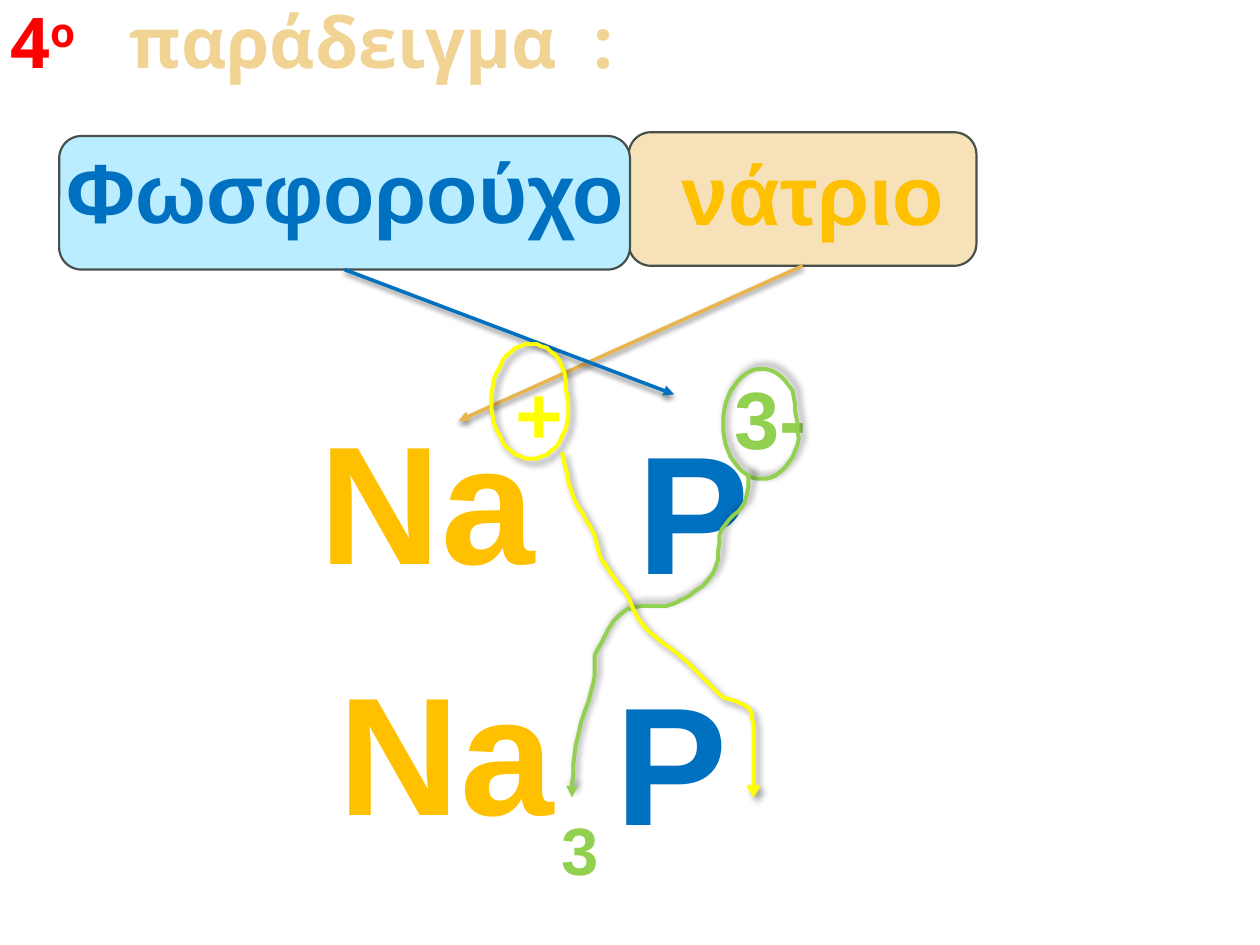
from math import cos, exp, pi, sin

from lxml.etree import SubElement
from pptx import Presentation
from pptx.dml.color import RGBColor
from pptx.enum.shapes import MSO_CONNECTOR as CONNECTOR, MSO_SHAPE as SHAPE
from pptx.enum.text import MSO_ANCHOR as ANCHOR, MSO_AUTO_SIZE as AUTO_SIZE, PP_ALIGN as ALIGN
from pptx.oxml.ns import qn
from pptx.util import Inches, Pt

rgb = RGBColor.from_string
SODIUM, PHOSPHORUS = "FFC000", "0070C0"
PLUS_CHARGE, MINUS_CHARGE = "FFFF00", "92D050"
TITLE_RED, TITLE_SAND = "FF0000", "F1D394"
SUPERSCRIPT, SUBSCRIPT = 30, -25
BOTTOM_SITE = 2

prs = Presentation()
prs.slide_width, prs.slide_height = Inches(10), Inches(7.5)
slide = prs.slides.add_slide(prs.slide_layouts[5])
shapes = slide.shapes


def format_run(run, font_name, size, color, baseline):
    run.font.name, run.font.size, run.font.bold = font_name, Pt(size), True
    run.font.color.rgb = rgb(color)
    if baseline:
        run.font._element.set("baseline", str(baseline * 1000))


def style_stroke(stroke, color, width, tail, blur, distance, angle, opacity):
    stroke.line.color.rgb = rgb(color)
    stroke.line.width = Pt(width)
    if tail:
        SubElement(stroke.line._get_or_add_ln(), qn("a:tailEnd"), type=tail)
    effects = SubElement(stroke._element.spPr, qn("a:effectLst"))
    shadow = SubElement(effects, qn("a:outerShdw"), blurRad=str(Pt(blur)),
                        dist=str(Pt(distance)), dir=str(angle * 60000),
                        algn="ctr", rotWithShape="0")
    shade = SubElement(shadow, qn("a:srgbClr"), val="000000")
    SubElement(shade, qn("a:alpha"), val=str(opacity * 1000))


title = shapes.title
title.left, title.top = Inches(-0.02), Inches(-0.06)
title.width, title.height = Inches(8.74), Inches(0.77)
title.line.color.rgb = rgb("FFFFFF")
title.line.width = Pt(0.75)
heading = title.text_frame
heading.word_wrap = True
heading.auto_size = AUTO_SIZE.SHAPE_TO_FIT_TEXT
heading.vertical_anchor = ANCHOR.TOP
heading_line = heading.paragraphs[0]
heading_line.alignment = ALIGN.LEFT
tabs = SubElement(heading_line._p.get_or_add_pPr(), qn("a:tabLst"))
for stop in (0.95, 4.63):
    SubElement(tabs, qn("a:tab"), pos=str(Inches(stop)), algn="l")
for text, color, baseline in [("4", TITLE_RED, 0), ("ο\t", TITLE_RED, SUPERSCRIPT),
                              ("παράδειγμα\t:", TITLE_SAND, 0)]:
    run = heading_line.add_run()
    run.text = text
    format_run(run, "Open Sans", 40, color, baseline)

name_boxes = []
for left, top, width, fill in [(4.99, 1.05, 2.76, "F6E1B8"), (0.47, 1.08, 4.53, "B9EDFF")]:
    name_box = shapes.add_shape(SHAPE.ROUNDED_RECTANGLE, Inches(left), Inches(top),
                                Inches(width), Inches(1.06))
    name_box.shadow.inherit = False
    name_box.fill.solid()
    name_box.fill.fore_color.rgb = rgb(fill)
    name_box.line.color.rgb = rgb("47504B")
    name_box.line.width = Pt(1.25)
    name_boxes.append(name_box)
sodium_box, phosphorus_box = name_boxes

names = [("Φωσφορούχο", 0.43, 1.06, 5.93, PHOSPHORUS), (" νάτριο", 5.13, 1.07, 4.84, SODIUM)]
symbols = [("Na", 2.44, 3.1, 2.52, SODIUM), ("P", 4.96, 3.18, 2.52, PHOSPHORUS),
           ("Na", 2.59, 5.09, 2.52, SODIUM), ("P", 4.79, 5.17, 1.4, PHOSPHORUS)]
charges = [("+", 3.99, 2.7, 0.64, PLUS_CHARGE), ("3-", 5.73, 2.74, 0.87, MINUS_CHARGE)]
indices = [("3", 4.36, 5.75, 0.55, MINUS_CHARGE)]
for labels, height, size, baseline in [(names, 0.91, 48, 0), (symbols, 1.72, 96, 0),
                                       (charges, 1.45, 80, SUPERSCRIPT),
                                       (indices, 1.21, 66, SUBSCRIPT)]:
    for text, left, top, width, color in labels:
        label = shapes.add_textbox(Inches(left), Inches(top), Inches(width), Inches(height))
        frame = label.text_frame
        frame.word_wrap = baseline == 0
        frame.auto_size = AUTO_SIZE.SHAPE_TO_FIT_TEXT
        frame.text = text
        format_run(frame.paragraphs[0].runs[0], "Arial", size, color, baseline)

for name_box, tip_x, tip_y, color in [(sodium_box, 3.64, 3.34, "E8B54D"),
                                      (phosphorus_box, 5.35, 3.13, PHOSPHORUS)]:
    arrow = shapes.add_connector(CONNECTOR.STRAIGHT, 0, 0, Inches(tip_x), Inches(tip_y))
    arrow.begin_connect(name_box, BOTTOM_SITE)
    style_stroke(arrow, color, 2, "triangle", 3.1, 1.8, 90, 45)

minus_to_sodium = [(5.94, 3.76), (5.91, 3.99), (5.73, 4.2), (5.66, 4.55), (5.35, 4.79),
                   (4.97, 4.84), (4.74, 5.16), (4.71, 5.42), (4.57, 5.91), (4.54, 6.33)]
plus_to_phosphorus = [(4.46, 3.59), (4.55, 3.94), (4.7, 4.21), (4.78, 4.45), (4.98, 4.73),
                      (5.12, 4.98), (5.44, 5.24), (5.71, 5.51), (5.93, 5.61), (5.98, 5.8),
                      (5.98, 6.33)]
LOOP_STEPS, CURVE_STEPS = 48, 6
DENT_DEPTH, DENT_ANGLE, DENT_SPREAD = 0.1, -0.15, 0.3

for color, shadow_angle, tail, loop_box, waypoints in [
        (MINUS_CHARGE, 315, "triangle", (5.74, 2.93, 0.61, 0.87), minus_to_sodium),
        (PLUS_CHARGE, 45, "arrow", (3.9, 2.73, 0.63, 0.91), plus_to_phosphorus)]:
    left, top, width, height = loop_box
    loop = []
    for step in range(LOOP_STEPS):
        angle = 2 * pi * step / LOOP_STEPS - pi
        radius = 0.5 - DENT_DEPTH / 2 * exp(-((angle - DENT_ANGLE) / DENT_SPREAD) ** 2)
        loop.append((left + width * (0.5 + radius * cos(angle)),
                     top + height * (0.5 + radius * sin(angle))))

    # Catmull-Rom spline through the waypoints
    padded = [waypoints[0], *waypoints, waypoints[-1]]
    trail = [waypoints[0]]
    for before, start, end, after in zip(padded, padded[1:], padded[2:], padded[3:]):
        for step in range(1, CURVE_STEPS + 1):
            t = step / CURVE_STEPS
            trail.append(tuple(
                b + ((c - a) * t + (2 * a - 5 * b + 4 * c - d) * t ** 2
                     + (3 * b - a - 3 * c + d) * t ** 3) / 2
                for a, b, c, d in zip(before, start, end, after)))

    for points, closed, head in [(loop, True, None), (trail, False, tail)]:
        units = [(100 * x, 100 * y) for x, y in points]
        builder = shapes.build_freeform(*units[0], scale=Inches(0.01))
        builder.add_line_segments(units[1:], close=closed)
        stroke = builder.convert_to_shape()
        stroke.fill.background()
        style_stroke(stroke, color, 2.25, head, 4, 3, shadow_angle, 40)

prs.save("out.pptx")
